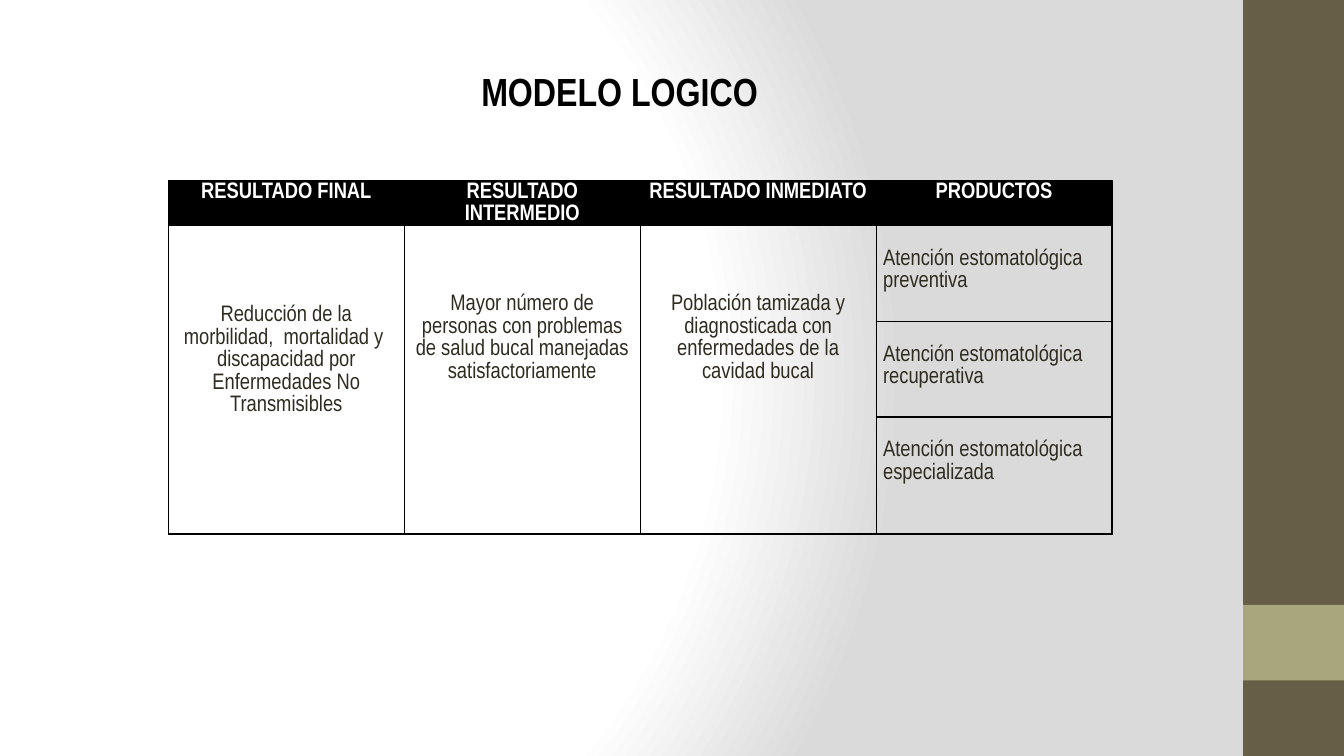
from pptx import Presentation
from pptx.dml.color import RGBColor as Rgb
from pptx.enum.shapes import MSO_SHAPE as Shape
from pptx.enum.text import PP_ALIGN as Align
from pptx.oxml import parse_xml
from pptx.oxml.ns import nsdecls, qn
from pptx.util import Inches, Pt

HEX = {"white": "FFFFFF", "gray": "DADADA", "brown": "675E47",
       "olive": "A9A57C", "black": "000000", "ink": "2F2B20"}
FONT = "Arial Narrow"


def write(frame, text, size, color, bold, align=Align.CENTER):
    para = frame.paragraphs[0]
    para.alignment = align
    para.line_spacing = 1.07
    run = para.add_run()
    run.text = text
    for name, value in {"name": FONT, "size": Pt(size), "bold": bold}.items():
        setattr(run.font, name, value)
    run.font.color.rgb = Rgb.from_string(HEX[color])
    return para


def outline(cell):
    """Draw a 1 pt black line on all four sides of the cell."""
    props = cell._tc.get_or_add_tcPr()
    for spot, side in enumerate(("lnL", "lnR", "lnT", "lnB")):
        props.insert(spot, parse_xml(
            f'<a:{side} {nsdecls("a")} w="{Pt(1)}"><a:solidFill>'
            f'<a:srgbClr val="{HEX["black"]}"/></a:solidFill></a:{side}>'))


deck = Presentation()
deck.slide_width, deck.slide_height = Inches(13.33), Inches(7.5)
slide = deck.slides.add_slide(deck.slide_layouts[6])

# Background: radial fade from white to gray
slide.background.fill.solid()
back = slide._element.find(".//" + qn("p:bgPr"))
stops = "".join(
    f'<a:gs pos="{pos * 1000}"><a:srgbClr val="{HEX[color]}"/></a:gs>'
    for pos, color in ((0, "white"), (75, "white"), (100, "gray")))
back.replace(back[0], parse_xml(
    f'<a:gradFill {nsdecls("a")} rotWithShape="1"><a:gsLst>{stops}</a:gsLst>'
    '<a:path path="circle"><a:fillToRect l="20000" t="50000" r="100000" '
    'b="50000"/></a:path></a:gradFill>'))

# Side band
for top, height, color in ((0, 7.5, "brown"), (6, 0.75, "olive")):
    band = slide.shapes.add_shape(Shape.RECTANGLE, Inches(12.33), Inches(top),
                                  Inches(1), Inches(height))
    band.shadow.inherit = False
    band.fill.solid()
    band.fill.fore_color.rgb = Rgb.from_string(HEX[color])
    band.line.fill.background()

# Logic model table
heads = ["RESULTADO FINAL", "RESULTADO INTERMEDIO",
         "RESULTADO INMEDIATO", "PRODUCTOS"]
results = [
    ("Reducción de la morbilidad,  mortalidad y  discapacidad por "
     "Enfermedades No Transmisibles", 0.78),
    ("Mayor número de personas con problemas de salud bucal manejadas "
     "satisfactoriamente", 0.67),
    ("Población tamizada y diagnosticada con enfermedades de la "
     "cavidad bucal", 0.67),
]
products = ["preventiva", "recuperativa", "especializada"]
heights = [0.44, 0.95, 0.95, 1.16]

table = slide.shapes.add_table(
    len(heights), len(heads), Inches(1.67), Inches(1.79),
    Inches(9.36), Inches(sum(heights))).table
for col in table.columns:
    col.width = Inches(2.34)
for row, height in zip(table.rows, heights):
    row.height = Inches(height)

for cell in table.iter_cells():
    cell.margin_left = cell.margin_right = Inches(0.07)
    cell.margin_top = cell.margin_bottom = 0
    cell.fill.background()
    outline(cell)

for col, head in enumerate(heads):
    cell = table.cell(0, col)
    cell.fill.solid()
    cell.fill.fore_color.rgb = Rgb.from_string(HEX["black"])
    write(cell.text_frame, head, 16, "white", True)

for col, (text, gap) in enumerate(results):
    cell = table.cell(1, col)
    cell.merge(table.cell(3, col))
    cell.margin_top = Inches(gap)
    write(cell.text_frame, text, 16, "ink", False)

for row, kind in enumerate(products, 1):
    cell = table.cell(row, 3)
    cell.margin_top = Inches(0.22)
    write(cell.text_frame, f"Atención estomatológica {kind}", 16, "ink",
          False, Align.LEFT)

# Title
box = slide.shapes.add_textbox(Inches(3.03), Inches(0.59),
                               Inches(6.23), Inches(0.58))
box.text_frame.word_wrap = True
title = write(box.text_frame, "MODELO LOGICO", 28, "black", True)
title.space_before = title.space_after = Pt(6)

deck.save("out.pptx")
